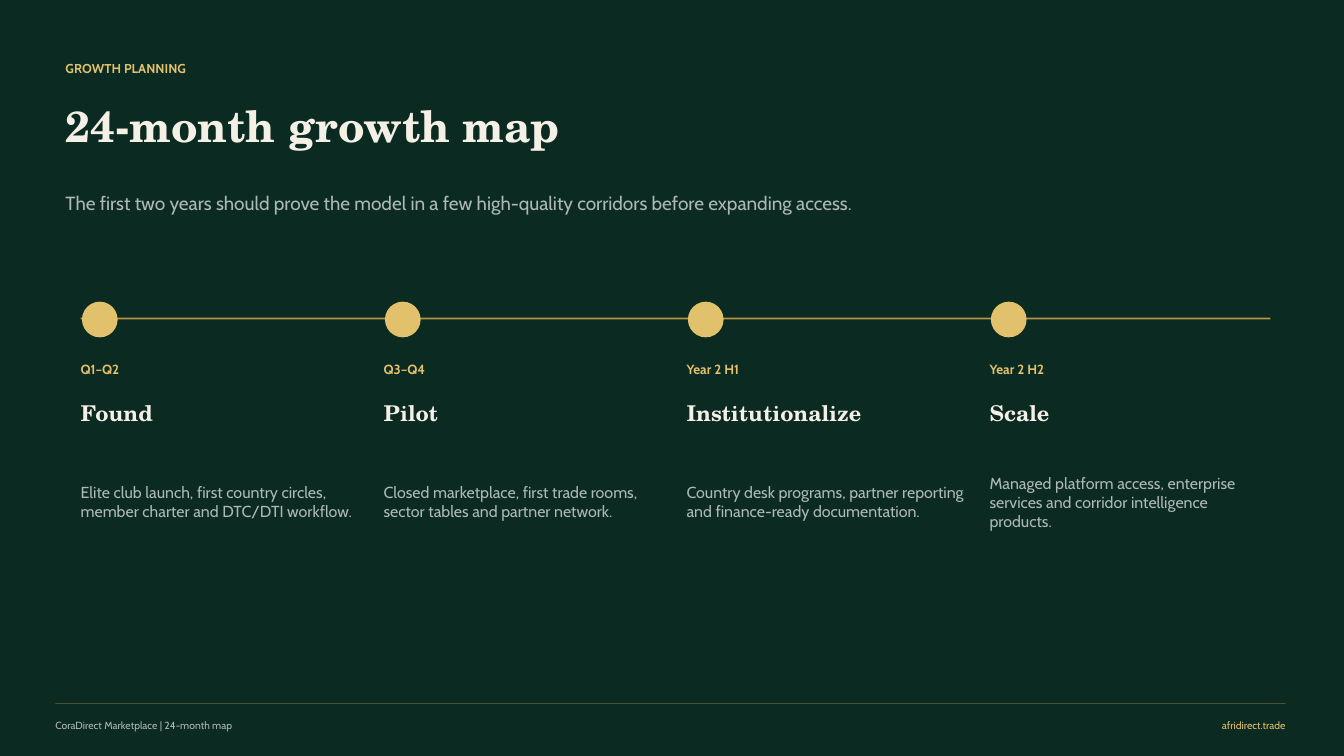
from dataclasses import dataclass

from lxml import etree
from pptx import Presentation
from pptx import util as u
from pptx.dml.color import RGBColor
from pptx.enum import shapes, text
from pptx.oxml import ns

PX = 9144  # EMU per px, 100 px to the inch


@dataclass(frozen=True)
class Theme:
    background: str = "0B2A22"
    gold: str = "E2C16D"
    rule: str = "C9A14A"
    cream: str = "F5F0E6"
    muted: str = "AEB8B5"
    sans: str = "Cabin"
    serif: str = "TeX Gyre Schola"
    kicker_size: float = 9.2
    title_size: float = 31
    lead_size: float = 13.6
    period_size: float = 9.5
    phase_size: float = 15.5
    detail_size: float = 11.4
    footer_size: float = 7.4


THEME = Theme()

PHASES = [
    ("Q1–Q2", "Found",
     "Elite club launch, first country circles, member charter and DTC/DTI workflow."),
    ("Q3–Q4", "Pilot",
     "Closed marketplace, first trade rooms, sector tables and partner network."),
    ("Year 2 H1", "Institutionalize",
     "Country desk programs, partner reporting and finance-ready documentation."),
    ("Year 2 H2", "Scale",
     "Managed platform access, enterprise services and corridor intelligence products."),
]


def px(*lengths):
    return [u.Emu(round(length * PX)) for length in lengths]


def rgb(color):
    return RGBColor.from_string(color)


def add_text(slide, box, words, size, color, font=THEME.sans, bold=False,
             anchor=text.MSO_ANCHOR.MIDDLE, align=text.PP_ALIGN.LEFT):
    frame = slide.shapes.add_textbox(*px(*box)).text_frame
    frame.word_wrap = True
    frame.vertical_anchor = anchor
    frame.margin_left = frame.margin_top = frame.margin_right = frame.margin_bottom = 0
    frame.text = words
    paragraph = frame.paragraphs[0]
    paragraph.alignment = align
    run_font = paragraph.runs[0].font
    run_font.name = font
    run_font.size = u.Pt(size)
    run_font.bold = bold
    run_font.color.rgb = rgb(color)


def add_rule(slide, left, top, width, weight, opacity):
    """Draw a horizontal gold rule; opacity is a percentage."""
    rule = slide.shapes.add_connector(
        shapes.MSO_CONNECTOR.STRAIGHT, *px(left, top, left + width, top))
    rule.line.width = u.Pt(weight)
    rule.line.color.rgb = rgb(THEME.rule)
    properties = rule._element.spPr
    color = properties.find(".//" + ns.qn("a:srgbClr"))
    etree.SubElement(color, ns.qn("a:alpha")).set("val", str(opacity * 1000))
    etree.SubElement(properties, ns.qn("a:effectLst"))


def add_header(slide, left, top, width):
    add_text(slide, (left, top, width, 25), "GROWTH PLANNING",
             THEME.kicker_size, THEME.gold, bold=True)
    add_text(slide, (left, top + 33, width, 72), "24-month growth map",
             THEME.title_size, THEME.cream, THEME.serif, bold=True)
    add_text(slide, (left, top + 135, width, 52),
             "The first two years should prove the model in a few "
             "high-quality corridors before expanding access.",
             THEME.lead_size, THEME.muted, anchor=text.MSO_ANCHOR.TOP)


def add_phase(slide, left, top, width, phase):
    period, name, detail = phase
    marker = slide.shapes.add_shape(
        shapes.MSO_SHAPE.OVAL, *px(left + 2, top, 34, 34))
    marker.shadow.inherit = False
    marker.fill.solid()
    marker.fill.fore_color.rgb = rgb(THEME.gold)
    marker.line.color.rgb = rgb(THEME.gold)
    marker.line.width = u.Pt(1)
    add_text(slide, (left, top + 52, width, 28), period,
             THEME.period_size, THEME.gold, bold=True)
    add_text(slide, (left, top + 85, width, 50), name,
             THEME.phase_size, THEME.cream, THEME.serif, bold=True)
    add_text(slide, (left, top + 143, width, 110), detail,
             THEME.detail_size, THEME.muted)


def add_timeline(slide, left, top, width, gap=22):
    add_rule(slide, left, top + 16, width, 1.1, 90)
    pitch = (width + gap) / len(PHASES)
    for index, phase in enumerate(PHASES):
        add_phase(slide, left + index * pitch, top, pitch - gap, phase)


def add_footer(slide, left, top, width):
    site_width = 245
    add_text(slide, (left, top + 14, 560, 16),
             "CoraDirect Marketplace | 24-month map",
             THEME.footer_size, THEME.muted)
    add_text(slide, (left + width - site_width, top + 14, site_width, 16),
             "afridirect.trade", THEME.footer_size, THEME.gold,
             align=text.PP_ALIGN.RIGHT)
    add_rule(slide, left, top, width, 0.5, 32)


def main():
    presentation = Presentation()
    presentation.slide_width, presentation.slide_height = px(1333, 750)
    slide = presentation.slides.add_slide(presentation.slide_layouts[6])
    slide.background.fill.solid()
    slide.background.fill.fore_color.rgb = rgb(THEME.background)
    add_header(slide, 65, 55, 830)
    add_timeline(slide, 80, 300, 1180)
    add_footer(slide, 55, 698, 1220)
    presentation.save("out.pptx")


if __name__ == "__main__":
    main()
